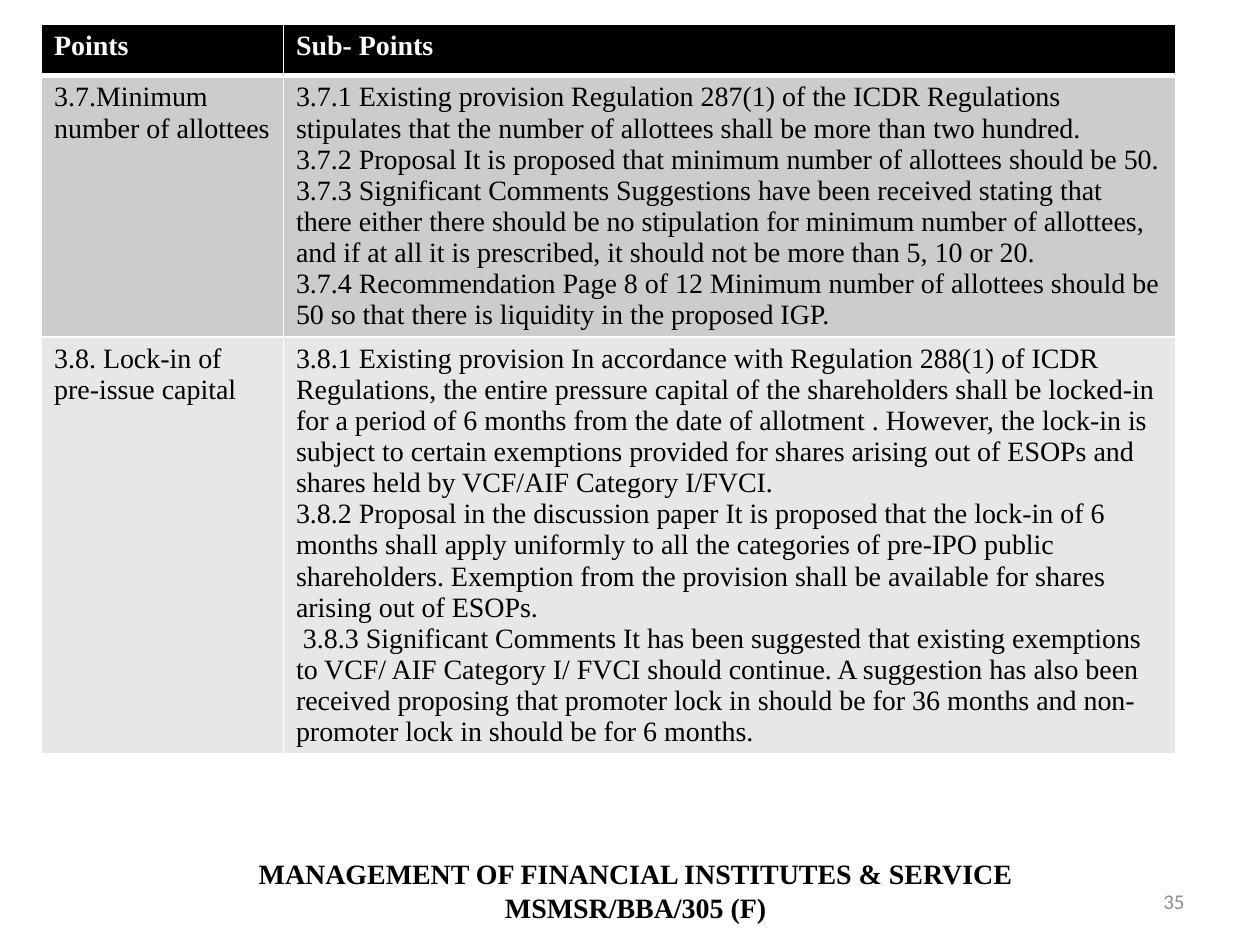
from lxml.etree import SubElement
from pptx import Presentation
from pptx.dml.color import RGBColor
from pptx.enum.text import MSO_ANCHOR, PP_ALIGN
from pptx.oxml.ns import qn
from pptx.util import Inches, Pt

COLORS = {
    "black": "000000",
    "white": "FFFFFF",
    "first_row": "CCCCCC",
    "second_row": "E7E7E7",
    "page_number": "8C8C8C",
}
SERIF = "Times New Roman"

HEADINGS = ["Points", ["Sub- Points"]]
ALLOTTEES = [
    "3.7.Minimum number of allottees",
    [
        "3.7.1 Existing provision Regulation 287(1) of the ICDR Regulations stipulates "
        "that the number of allottees shall be more than two hundred.",
        "3.7.2 Proposal It is proposed that minimum number of allottees should be 50.",
        "3.7.3 Significant Comments Suggestions have been received stating that there "
        "either there should be no stipulation for minimum number of allottees, and if "
        "at all it is prescribed, it should not be more than 5, 10 or 20.",
        "3.7.4 Recommendation Page 8 of 12 Minimum number of allottees should be 50 so "
        "that there is liquidity in the proposed IGP.",
    ],
]
LOCK_IN = [
    "3.8. Lock-in of pre-issue capital",
    [
        "3.8.1 Existing provision In accordance with Regulation 288(1) of ICDR "
        "Regulations, the entire pressure capital of the shareholders shall be locked-in "
        "for a period of 6 months from the date of allotment . However, the lock-in is "
        "subject to certain exemptions provided for shares arising out of ESOPs and "
        "shares held by VCF/AIF Category I/FVCI.",
        "3.8.2 Proposal in the discussion paper It is proposed that the lock-in of 6 "
        "months shall apply uniformly to all the categories of pre-IPO public "
        "shareholders. Exemption from the provision shall be available for shares "
        "arising out of ESOPs.",
        " 3.8.3 Significant Comments It has been suggested that existing exemptions to "
        "VCF/ AIF Category I/ FVCI should continue. A suggestion has also been received "
        "proposing that promoter lock in should be for 36 months and non-promoter lock "
        "in should be for 6 months.",
    ],
]
# content, row height, fill, text colour
ROWS = [
    (HEADINGS, 0.41, "black", "white"),
    (ALLOTTEES, 2.07, "first_row", "black"),
    (LOCK_IN, 3.31, "second_row", "black"),
]


def rgb(name):
    return RGBColor.from_string(COLORS[name])


def style_font(paragraph, size, color, bold=False, name=SERIF):
    font = paragraph.font
    font.name, font.size, font.bold = name, Pt(size), bold
    font.color.rgb = rgb(color)


def set_borders(cell, bottom_width):
    """Draw white borders, which must precede the fill in the cell properties."""
    properties = cell._tc.get_or_add_tcPr()
    widths = {"a:lnL": 1, "a:lnR": 1, "a:lnT": 1, "a:lnB": bottom_width}
    for position, (side, width) in enumerate(widths.items()):
        line = SubElement(properties, qn(side), w=str(Pt(width)))
        fill = SubElement(line, qn("a:solidFill"))
        SubElement(fill, qn("a:srgbClr"), val=COLORS["white"])
        properties.insert(position, line)


def add_points_table(slide, left, top, width):
    height = Inches(sum(row[1] for row in ROWS))
    table = slide.shapes.add_table(len(ROWS), 2, left, top, width, height).table
    points_width = Inches(1.92)
    table.columns[0].width = points_width
    table.columns[1].width = width - points_width

    for index, ((point, sub_points), row_height, fill, color) in enumerate(ROWS):
        table.rows[index].height = Inches(row_height)
        is_header = index == 0
        for cell, lines in zip(table.rows[index].cells, ([point], sub_points)):
            cell.text = "\n".join(lines)
            cell.fill.solid()
            cell.fill.fore_color.rgb = rgb(fill)
            set_borders(cell, 3 if is_header else 1)
            for paragraph in cell.text_frame.paragraphs:
                style_font(paragraph, 16, color, bold=is_header)


def add_label(slide, text, left, top, width, height, align, anchor):
    """Add a one-paragraph text box and return its paragraph."""
    frame = slide.shapes.add_textbox(left, top, width, height).text_frame
    frame.word_wrap = True
    frame.vertical_anchor = anchor
    paragraph = frame.paragraphs[0]
    paragraph.text = text
    paragraph.alignment = align
    return paragraph


def add_footer(slide, left, top, width, height):
    course = add_label(
        slide, "MANAGEMENT OF FINANCIAL INSTITUTES & SERVICE\vMSMSR/BBA/305 (F)",
        left, top, width, height, PP_ALIGN.CENTER, MSO_ANCHOR.TOP)
    style_font(course, 16, "black", bold=True)

    number_width = Inches(2.33)
    page_number = add_label(
        slide, "35", left + width + Inches(0.25) - number_width, top + Inches(0.2),
        number_width, Inches(0.4), PP_ALIGN.RIGHT, MSO_ANCHOR.MIDDLE)
    style_font(page_number, 12, "page_number", name="Calibri")


def main():
    presentation = Presentation()
    presentation.slide_width, presentation.slide_height = Inches(10), Inches(7.5)
    slide = presentation.slides.add_slide(presentation.slide_layouts[6])
    add_points_table(slide, Inches(0.33), Inches(0.19), Inches(9))
    add_footer(slide, Inches(0.84), Inches(6.75), Inches(8.41), Inches(0.64))
    presentation.save("out.pptx")


if __name__ == "__main__":
    main()
